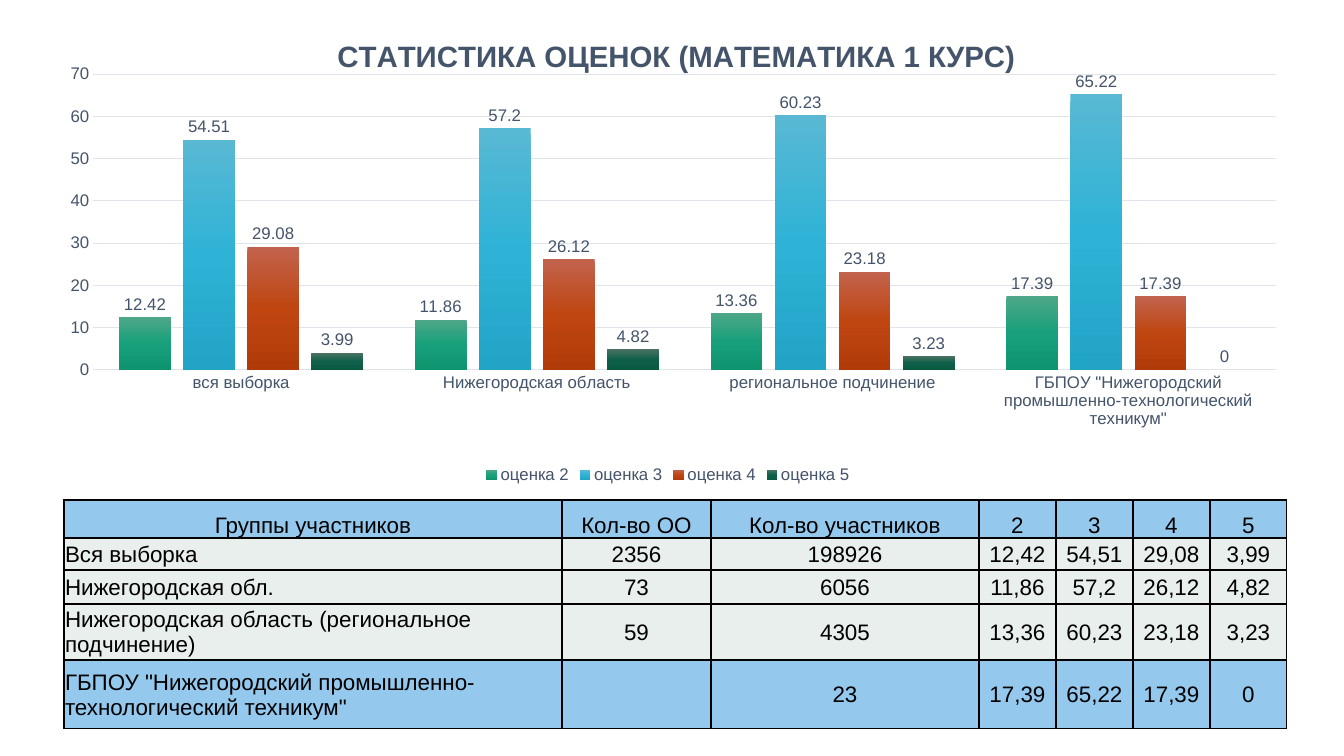
from copy import deepcopy

from pptx import Presentation
from pptx.chart.data import CategoryChartData
from pptx.dml.color import RGBColor
from pptx.enum.chart import XL_CHART_TYPE, XL_LABEL_POSITION, XL_LEGEND_POSITION, XL_TICK_MARK
from pptx.enum.text import MSO_ANCHOR, PP_ALIGN
from pptx.oxml import parse_xml
from pptx.oxml.ns import nsdecls, qn
from pptx.util import Pt

PX = 914400 / 100.8
FONT = "Arial"
COLORS = {"text": "44546A", "grid": "E0E5EB", "black": "000000",
          "accent_row": "94C8ED", "plain_row": "E8EFEC"}
GRADE_GRADIENTS = {
    "оценка 2": ["4EA788", "17A07B", "0F9470"],
    "оценка 3": ["59B8D4", "2EB3D6", "21A4C6"],
    "оценка 4": ["C2634D", "BF4611", "B13B08"],
    "оценка 5": ["4C7263", "0E604A", "095943"],
}
COLLEGE = 'ГБПОУ "Нижегородский промышленно-технологический техникум"'
GROUPS = [  # chart label, table label, organisations, participants, share of each grade
    ("вся выборка", "Вся выборка", "2356", "198926", [12.42, 54.51, 29.08, 3.99]),
    ("Нижегородская область", "Нижегородская обл.", "73", "6056", [11.86, 57.2, 26.12, 4.82]),
    ("региональное подчинение", "Нижегородская область (региональное подчинение)",
     "59", "4305", [13.36, 60.23, 23.18, 3.23]),
    (COLLEGE, COLLEGE, "", "23", [17.39, 65.22, 17.39, 0]),
]


def px(*lengths):
    return [round(length * PX) for length in lengths]


def set_font(font, size, color, bold=False):
    font.name, font.size, font.bold = FONT, Pt(size), bold
    font.color.rgb = RGBColor.from_string(COLORS[color])


prs = Presentation()
prs.slide_width, prs.slide_height = px(1344, 756)
slide = prs.slides.add_slide(prs.slide_layouts[6])

# Chart
grades = CategoryChartData()
grades.categories = [group[0] for group in GROUPS]
for index, grade in enumerate(GRADE_GRADIENTS):
    grades.add_series(grade, [group[4][index] for group in GROUPS])
chart = slide.shapes.add_chart(
    XL_CHART_TYPE.COLUMN_CLUSTERED, *px(46, 8, 1244, 480), grades).chart
set_font(chart.font, 12, "text")

heading = chart.chart_title.text_frame.paragraphs[0]
heading.text = "СТАТИСТИКА ОЦЕНОК (МАТЕМАТИКА 1 КУРС)"
set_font(heading.font, 21, "text", bold=True)
chart.chart_title.include_in_layout = False

chart.has_legend = True
chart.legend.position = XL_LEGEND_POSITION.BOTTOM
chart.legend.include_in_layout = False
set_font(chart.legend.font, 12, "text")

for axis in (chart.category_axis, chart.value_axis):
    axis.major_tick_mark = axis.minor_tick_mark = XL_TICK_MARK.NONE
    set_font(axis.tick_labels.font, 12, "text")
shares = chart.value_axis
shares.minimum_scale, shares.maximum_scale, shares.major_unit = 0, 70, 10
shares.format.line.fill.background()
for line in (chart.category_axis.format.line, shares.major_gridlines.format.line):
    line.color.rgb = RGBColor.from_string(COLORS["grid"])
    line.width = Pt(0.75)

columns = chart.plots[0]
columns.gap_width, columns.overlap, columns.vary_by_categories = 100, -24, False
for series in columns.series:
    fill = series.format.fill
    fill.gradient()
    fill.gradient_angle = 270
    stops = series.format._element.find(".//" + qn("a:gsLst")) if hasattr(
        series.format, "_element") else series._element.find(".//" + qn("a:gsLst"))
    stops.append(deepcopy(stops[0]))
    for index, (stop, color) in enumerate(
            zip(fill.gradient_stops, GRADE_GRADIENTS[series.name])):
        stop.position = index / 2
        stop.color.rgb = RGBColor.from_string(color)
    labels = series.data_labels
    labels.show_value = True
    labels.position = XL_LABEL_POSITION.OUTSIDE_END
    set_font(labels.font, 12, "text")

title_xml = chart.chart_title._element
plot_xml = chart._chartSpace.chart.plotArea
for parent, settings in (
    (title_xml, {"xMode": "edge", "yMode": "edge", "x": 0.23, "y": 0.05}),
    (plot_xml, {"layoutTarget": "inner", "xMode": "edge", "yMode": "edge",
                "x": 0.038, "y": 0.138, "w": 0.951, "h": 0.616}),
):
    for automatic in parent.findall(qn("c:layout")):
        parent.remove(automatic)
    values = "".join(f'<c:{key} val="{value}"/>' for key, value in settings.items())
    layout = parse_xml(f'<c:layout {nsdecls("c")}><c:manualLayout>{values}'
                       "</c:manualLayout></c:layout>")
    parent.insert(1 if parent is title_xml else 0, layout)

# Table
rows = [["Группы участников", "Кол-во ОО", "Кол-во участников", "2", "3", "4", "5"]]
for _, label, organisations, participants, values in GROUPS:
    rows.append([label, organisations, participants,
                 *(str(value).replace(".", ",") for value in values)])
widths = px(498, 149, 268, *[77] * 4)
heights = px(38, 32, 34, 56, 69)
table = slide.shapes.add_table(
    len(rows), len(widths), *px(64, 500), sum(widths), sum(heights)).table
table.first_row = table.horz_banding = False
for column, width in zip(table.columns, widths):
    column.width = width
for row_index, (row, height, texts) in enumerate(zip(table.rows, heights, rows)):
    row.height = height
    accented = row_index in (0, len(rows) - 1)
    for column_index, (cell, text) in enumerate(zip(row.cells, texts)):
        cell.margin_left = cell.margin_top = cell.margin_right = px(1)[0]
        cell.margin_bottom = 0
        cell.vertical_anchor = MSO_ANCHOR.MIDDLE if row_index else MSO_ANCHOR.BOTTOM
        cell.text = text
        paragraph = cell.text_frame.paragraphs[0]
        centered = row_index == 0 or column_index > 0
        paragraph.alignment = PP_ALIGN.CENTER if centered else PP_ALIGN.LEFT
        set_font(paragraph.font, 16, "black")
        properties = cell._tc.get_or_add_tcPr()
        for side in ("lnL", "lnR", "lnT", "lnB"):
            properties.append(parse_xml(
                f'<a:{side} {nsdecls("a")} w="{Pt(1)}"><a:solidFill>'
                f'<a:srgbClr val="{COLORS["black"]}"/></a:solidFill></a:{side}>'))
        cell.fill.solid()
        cell.fill.fore_color.rgb = RGBColor.from_string(
            COLORS["accent_row" if accented else "plain_row"])

prs.save("out.pptx")
